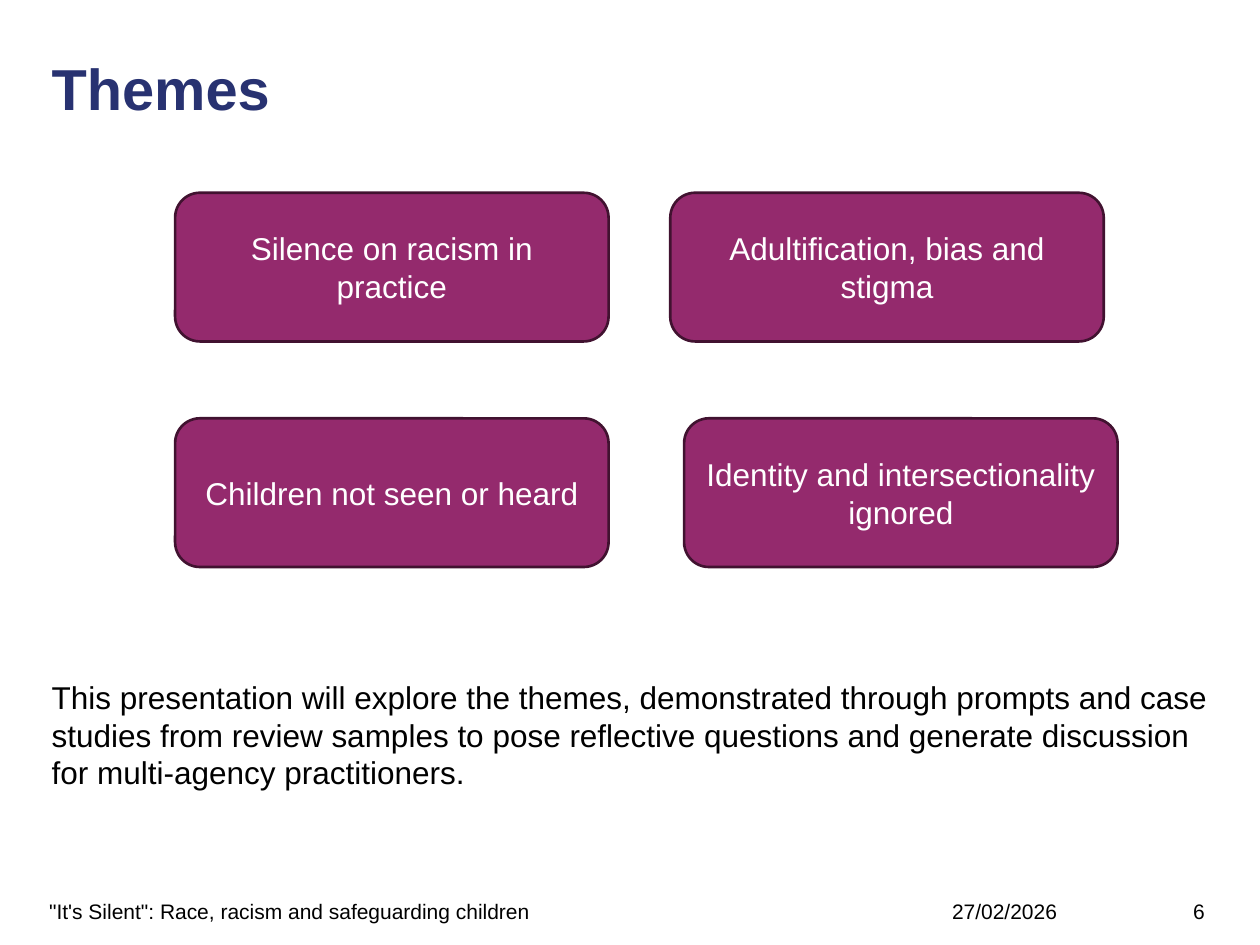
from pptx import Presentation
from pptx.dml.color import RGBColor
from pptx.enum.shapes import MSO_SHAPE
from pptx.enum.text import MSO_ANCHOR, PP_ALIGN
from pptx.util import Inches, Pt

NAVY = RGBColor(0x28, 0x32, 0x71)
PLUM = RGBColor(0x94, 0x2A, 0x6D)
DARK_PLUM = RGBColor(0x41, 0x12, 0x30)
WHITE = RGBColor(0xFF, 0xFF, 0xFF)
BLACK = RGBColor(0x00, 0x00, 0x00)

FONT = "Arial"
LEFT, CONTENT_WIDTH, BLOCK_HEIGHT = 0.41, 9.19, 1.18
THEME_WIDTH = 3.44
FOOTER_TOP, FOOTER_HEIGHT = 7.13, 0.2

# Each theme: left, top, wording
THEMES = [
    (1.39, 1.53, "Silence on racism in practice"),
    (5.32, 1.53, "Adultification, bias and stigma"),
    (1.39, 3.32, "Children not seen or heard"),
    (5.43, 3.32, "Identity and intersectionality ignored"),
]

# Each footer part: left, width, alignment, wording
FOOTER = [
    (0.39, 5.91, PP_ALIGN.LEFT, '"It\'s Silent": Race, racism and safeguarding children'),
    (6.42, 1.97, PP_ALIGN.RIGHT, "27/02/2026"),
    (9.47, 0.39, PP_ALIGN.LEFT, "6"),
]

SUMMARY = (
    "This presentation will explore the themes, demonstrated through prompts "
    "and case studies from review samples to pose reflective questions and "
    "generate discussion for multi-agency practitioners."
)


def write(frame, text, size, color, align=PP_ALIGN.LEFT, anchor=MSO_ANCHOR.TOP, bold=False):
    """Fill a text frame with one formatted run and return its paragraph."""
    frame.word_wrap = True
    frame.vertical_anchor = anchor
    paragraph = frame.paragraphs[0]
    paragraph.alignment = align
    run = paragraph.add_run()
    run.text = text
    run.font.name = FONT
    run.font.size = Pt(size)
    run.font.bold = bold
    run.font.color.rgb = color
    return paragraph


def clear_margins(frame):
    frame.margin_left = frame.margin_right = 0
    frame.margin_top = frame.margin_bottom = 0


def set_title(slide, text):
    title = slide.shapes.title
    title.left, title.top = Inches(LEFT), Inches(0.48)
    title.width, title.height = Inches(CONTENT_WIDTH), Inches(BLOCK_HEIGHT)
    clear_margins(title.text_frame)
    heading = write(title.text_frame, text, 33, NAVY, bold=True)
    heading.line_spacing = 0.9


def add_text(slide, left, top, width, height, text, size, **layout):
    box = slide.shapes.add_textbox(Inches(left), Inches(top), Inches(width), Inches(height))
    clear_margins(box.text_frame)
    return write(box.text_frame, text, size, BLACK, **layout)


def add_theme(slide, left, top, text):
    theme = slide.shapes.add_shape(
        MSO_SHAPE.ROUNDED_RECTANGLE,
        Inches(left), Inches(top), Inches(THEME_WIDTH), Inches(BLOCK_HEIGHT),
    )
    theme.shadow.inherit = False
    theme.fill.solid()
    theme.fill.fore_color.rgb = PLUM
    theme.line.color.rgb = DARK_PLUM
    theme.line.width = Pt(1.5)
    write(theme.text_frame, text, 18, WHITE, PP_ALIGN.CENTER, MSO_ANCHOR.MIDDLE)


def main():
    prs = Presentation()
    prs.slide_width, prs.slide_height = Inches(10), Inches(7.5)
    slide = prs.slides.add_slide(prs.slide_layouts.get_by_name("Title Only"))

    set_title(slide, "Themes")

    # Summary below the themes
    summary = add_text(slide, LEFT, 5.38, CONTENT_WIDTH, BLOCK_HEIGHT, SUMMARY, 18)
    summary.space_after = Pt(8.5)

    # Footer, date and page number
    for left, width, align, text in FOOTER:
        add_text(slide, left, FOOTER_TOP, width, FOOTER_HEIGHT, text, 12,
                 align=align, anchor=MSO_ANCHOR.MIDDLE)

    # Four themes
    for left, top, text in THEMES:
        add_theme(slide, left, top, text)

    prs.save("out.pptx")


if __name__ == "__main__":
    main()
